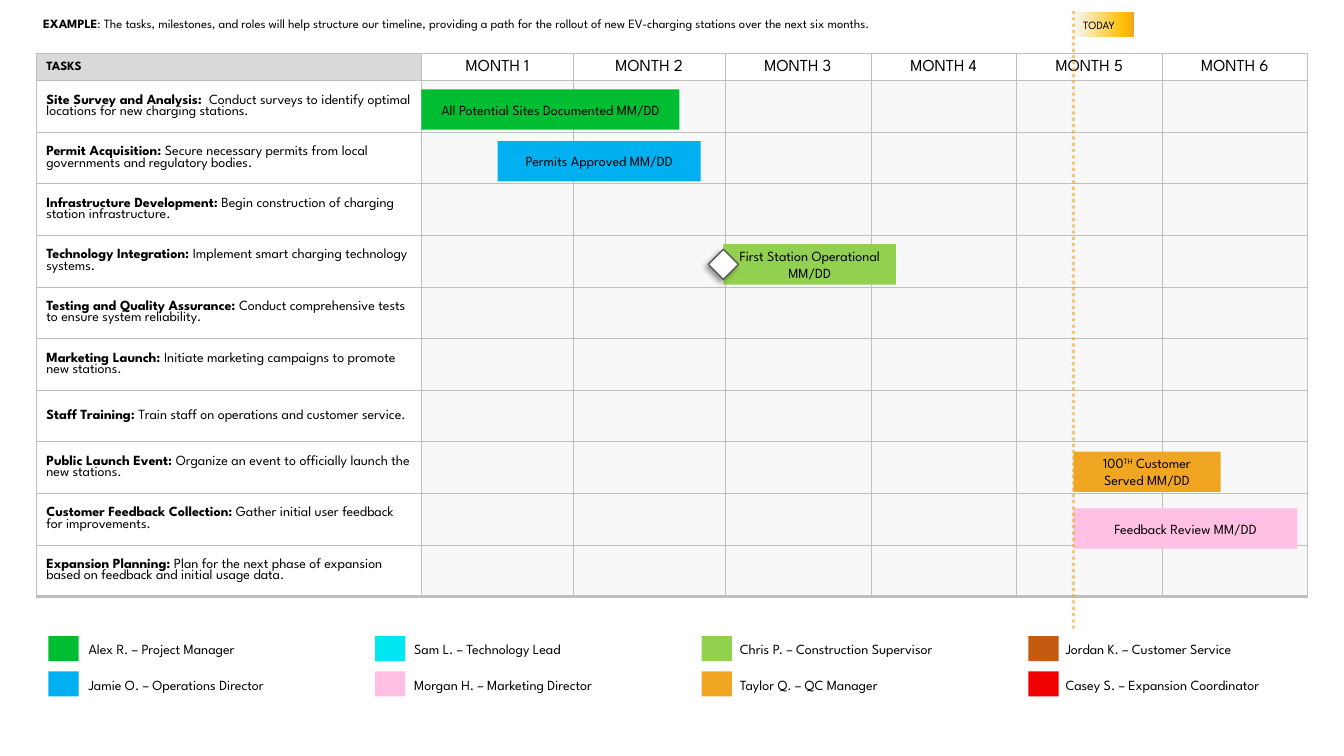
"""Build a six-month rollout timeline slide with tasks, milestones and roles."""
from dataclasses import dataclass
from typing import Any, NamedTuple

from lxml import etree
from pptx import Presentation
from pptx import util as u
from pptx.dml import color as dc
from pptx.enum import dml, shapes as sh, text as tx
from pptx.oxml import ns


@dataclass(frozen=True)
class Theme:
    font: str = "League Spartan"
    ink: str = "000000"
    white: str = "FFFFFF"
    grid: str = "BFBFBF"
    header: str = "D9D9D9"
    empty: str = "F2F2F2"
    outline: str = "595959"
    green: str = "00BD32"
    blue: str = "00B0F0"
    cyan: str = "00E7F2"
    pink: str = "FFC0E3"
    lime: str = "92D050"
    amber: str = "F0A622"
    brown: str = "C55A11"
    red: str = "F10002"
    today: tuple = ((0, "F6F8FC"), (83, "FFC000"), (100, "F0A622"))
    tiny: float = 8
    small: float = 9
    body: float = 10
    month: float = 12


class Box(NamedTuple):
    left: float
    top: float
    width: float
    height: float


class Run(NamedTuple):
    words: str
    bold: bool = False
    raised: bool = False


class Milestone(NamedTuple):
    start: float
    end: float
    row: float
    fill: str
    label: tuple[Run, ...]


class Role(NamedTuple):
    column: int
    row: int
    fill: str
    label: str


T = Theme()
TABLE_LEFT, TABLE_TOP, HEADER_HEIGHT, TASKS_HEIGHT = 0.36, 0.53, 0.27, 5.12
COLUMNS = (3.82, 1.51, 1.5, 1.45, 1.44, 1.45, 1.44)
BAR_HEIGHT, DIAMOND, TODAY, OPENING = 0.4, 0.3, 4.39, 1.99
LEGEND_TOP, LEGEND_ROW = 6.31, 0.35
TASKS = (
    ("Site Survey and Analysis:  ", "Conduct surveys to identify optimal locations for new charging stations."),
    ("Permit Acquisition: ", "Secure necessary permits from local governments and regulatory bodies."),
    ("Infrastructure Development: ", "Begin construction of charging station infrastructure."),
    ("Technology Integration: ", "Implement smart charging technology systems."),
    ("Testing and Quality Assurance: ", "Conduct comprehensive tests to ensure system reliability."),
    ("Marketing Launch: ", "Initiate marketing campaigns to promote new stations."),
    ("Staff Training: ", "Train staff on operations and customer service."),
    ("Public Launch Event: ", "Organize an event to officially launch the new stations."),
    ("Customer Feedback Collection: ", "Gather initial user feedback for improvements."),
    ("Expansion Planning: ", "Plan for the next phase of expansion based on feedback and initial usage data."),
)
ROW_HEIGHT = TASKS_HEIGHT / len(TASKS)
MILESTONES = (
    Milestone(0, 1.7, 0.17, T.green, (Run("All Potential Sites Documented MM/DD"),)),
    Milestone(0.5, 1.84, 1.17, T.blue, (Run("Permits Approved MM/DD"),)),
    Milestone(OPENING, 3.17, 3.17, T.lime, (Run("First Station Operational MM/DD"),)),
    Milestone(TODAY, 5.4, 7.19, T.amber, (Run("100"), Run("TH", raised=True), Run(" Customer Served MM/DD"))),
    Milestone(TODAY, 5.93, 8.29, T.pink, (Run("Feedback Review MM/DD"),)),
)
ROLES = (
    Role(0, 0, T.green, "Alex R. – Project Manager"),
    Role(0, 1, T.blue, "Jamie O. – Operations Director"),
    Role(1, 0, T.cyan, "Sam L. – Technology Lead"),
    Role(1, 1, T.pink, "Morgan H. – Marketing Director"),
    Role(2, 0, T.lime, "Chris P. – Construction Supervisor"),
    Role(2, 1, T.amber, "Taylor Q. – QC Manager"),
    Role(3, 0, T.brown, "Jordan K. – Customer Service"),
    Role(3, 1, T.red, "Casey S. – Expansion Coordinator"),
)
BAR_FORMAT = {"word_wrap": True, "vertical_anchor": tx.MSO_ANCHOR.MIDDLE}
NOTE_FORMAT = {"word_wrap": True, "auto_size": tx.MSO_AUTO_SIZE.SHAPE_TO_FIT_TEXT}


def apply(target: Any, values: dict[str, Any]) -> None:
    for key, value in values.items():
        setattr(target, key, value)


def child(parent: Any, tag: str, **attributes: Any) -> Any:
    return etree.SubElement(parent, ns.qn(tag), {k: str(v) for k, v in attributes.items()})


def month_x(month: float) -> float:
    whole = int(month)
    return TABLE_LEFT + sum(COLUMNS[:whole + 1]) + (month - whole) * COLUMNS[whole + 1]


def row_y(row: float) -> float:
    return TABLE_TOP + HEADER_HEIGHT + row * ROW_HEIGHT


def emu(box: Box) -> list[int]:
    return [u.Inches(length) for length in box]


def paint(fill: Any, color: str) -> None:
    fill.solid()
    fill.fore_color.rgb = dc.RGBColor.from_string(color)


def write(frame: Any, runs: tuple[Run, ...], size: float, align: Any = tx.PP_ALIGN.LEFT, spacing: float = 1.0) -> None:
    paragraph = frame.paragraphs[0]
    apply(paragraph, {"alignment": align, "line_spacing": spacing})
    for part in runs:
        run = paragraph.add_run()
        run.text = part.words
        apply(run.font, {"name": T.font, "size": u.Pt(size), "bold": part.bold})
        run.font.color.rgb = dc.RGBColor.from_string(T.ink)
        if part.raised:
            run.font._element.set("baseline", "30000")


def add_block(slide: Any, box: Box, color: str, kind: Any = sh.MSO_SHAPE.RECTANGLE) -> Any:
    block = slide.shapes.add_shape(kind, *emu(box))
    block.shadow.inherit = False
    paint(block.fill, color)
    block.line.fill.background()
    apply(block.text_frame, BAR_FORMAT)
    return block


def add_note(slide: Any, box: Box, runs: tuple[Run, ...], size: float) -> None:
    frame = slide.shapes.add_textbox(*emu(box)).text_frame
    apply(frame, NOTE_FORMAT)
    write(frame, runs, size)


def style_cell(cell: Any, color: str, opacity: int, bottom: float) -> None:
    paint(cell.fill, color)
    cell.vertical_anchor = tx.MSO_ANCHOR.MIDDLE
    properties = cell._tc.get_or_add_tcPr()
    if opacity < 100:
        child(properties.find(".//" + ns.qn("a:srgbClr")), "a:alpha", val=opacity * 1000)
    for index, (side, width) in enumerate(zip("LRTB", (0.5, 0.5, 0.5, bottom))):
        border = child(properties, f"a:ln{side}", w=u.Pt(width))
        child(child(border, "a:solidFill"), "a:srgbClr", val=T.grid)
        properties.insert(index, border)


def add_schedule(slide: Any) -> None:
    box = Box(TABLE_LEFT, TABLE_TOP, sum(COLUMNS), HEADER_HEIGHT + TASKS_HEIGHT)
    table = slide.shapes.add_table(len(TASKS) + 1, len(COLUMNS), *emu(box)).table
    apply(table, {"first_row": False, "horz_banding": False})
    for column, width in zip(table.columns, COLUMNS):
        column.width = u.Inches(width)
    for r, row in enumerate(table.rows):
        row.height = u.Inches(ROW_HEIGHT if r else HEADER_HEIGHT)
        for c, cell in enumerate(row.cells):
            if r == 0:
                color, opacity = (T.white, 75) if c else (T.header, 100)
                title = Run(f"MONTH {c}") if c else Run("TASKS", True)
                align = tx.PP_ALIGN.CENTER if c else tx.PP_ALIGN.LEFT
                write(cell.text_frame, (title,), T.month if c else T.small, align, 0.9)
            else:
                color, opacity = (T.empty, 50) if c else (T.white, 100)
                if c == 0:
                    task, detail = TASKS[r - 1]
                    write(cell.text_frame, (Run(task, True), Run(detail)), T.body, spacing=0.9)
            style_cell(cell, color, opacity, 3 if r == len(TASKS) else 0.5)


def add_today(slide: Any) -> None:
    x = month_x(TODAY)
    flag = add_block(slide, Box(x, 0.12, 0.6, 0.25), T.amber)
    flag.fill.gradient()
    flag.fill.gradient_angle = 0
    stops = flag._element.spPr.find(".//" + ns.qn("a:gsLst"))
    stops.clear()
    for position, color in T.today:
        child(child(stops, "a:gs", pos=position * 1000), "a:srgbClr", val=color)
    write(flag.text_frame, (Run("TODAY"),), T.tiny)
    marker = slide.shapes.add_connector(sh.MSO_CONNECTOR.STRAIGHT, *emu(Box(x, 0.11, x, 6.24)))
    apply(marker.line, {"width": u.Pt(2.25), "dash_style": dml.MSO_LINE.ROUND_DOT})
    paint(marker.line.fill, T.amber)
    child(marker._element.spPr.find(".//" + ns.qn("a:srgbClr")), "a:alpha", val=60000)
    child(marker._element.spPr, "a:effectLst")


def add_diamond(slide: Any) -> None:
    box = Box(month_x(OPENING) - DIAMOND / 2, row_y(3.56) - DIAMOND / 2, DIAMOND, DIAMOND)
    diamond = add_block(slide, box, T.white, sh.MSO_SHAPE.DIAMOND)
    paint(diamond.line.fill, T.outline)
    diamond.line.width = u.Pt(1)
    effects = diamond._element.spPr.find(ns.qn("a:effectLst"))
    shadow = child(effects, "a:outerShdw", blurRad=u.Pt(4), dist=u.Pt(3), dir=135 * 60000)
    child(child(shadow, "a:srgbClr", val=T.ink), "a:alpha", val=40000)


def main() -> None:
    deck = Presentation()
    apply(deck, {"slide_width": u.Inches(13.33), "slide_height": u.Inches(7.5)})
    slide = deck.slides.add_slide(deck.slide_layouts[6])
    add_schedule(slide)
    for item in MILESTONES:
        left = month_x(item.start)
        bar = add_block(slide, Box(left, row_y(item.row), month_x(item.end) - left, BAR_HEIGHT), item.fill)
        write(bar.text_frame, item.label, T.body, tx.PP_ALIGN.CENTER)
    for role in ROLES:
        top = LEGEND_TOP + role.row * LEGEND_ROW
        add_block(slide, Box(0.48 + role.column * 3.24, top, 0.3, 0.25), role.fill)
        add_note(slide, Box(0.78 + role.column * 3.23, top, 2.4, 0.27), (Run(role.label),), T.body)
    add_today(slide)
    add_diamond(slide)
    add_note(slide, Box(0.33, 0.11, 10.14, 0.25), (
        Run("EXAMPLE", True),
        Run(": The tasks, milestones, and roles will help structure our timeline, providing a path "
            "for the rollout of new EV-charging stations over the next six months."),
    ), T.small)
    deck.save("out.pptx")


if __name__ == "__main__":
    main()
